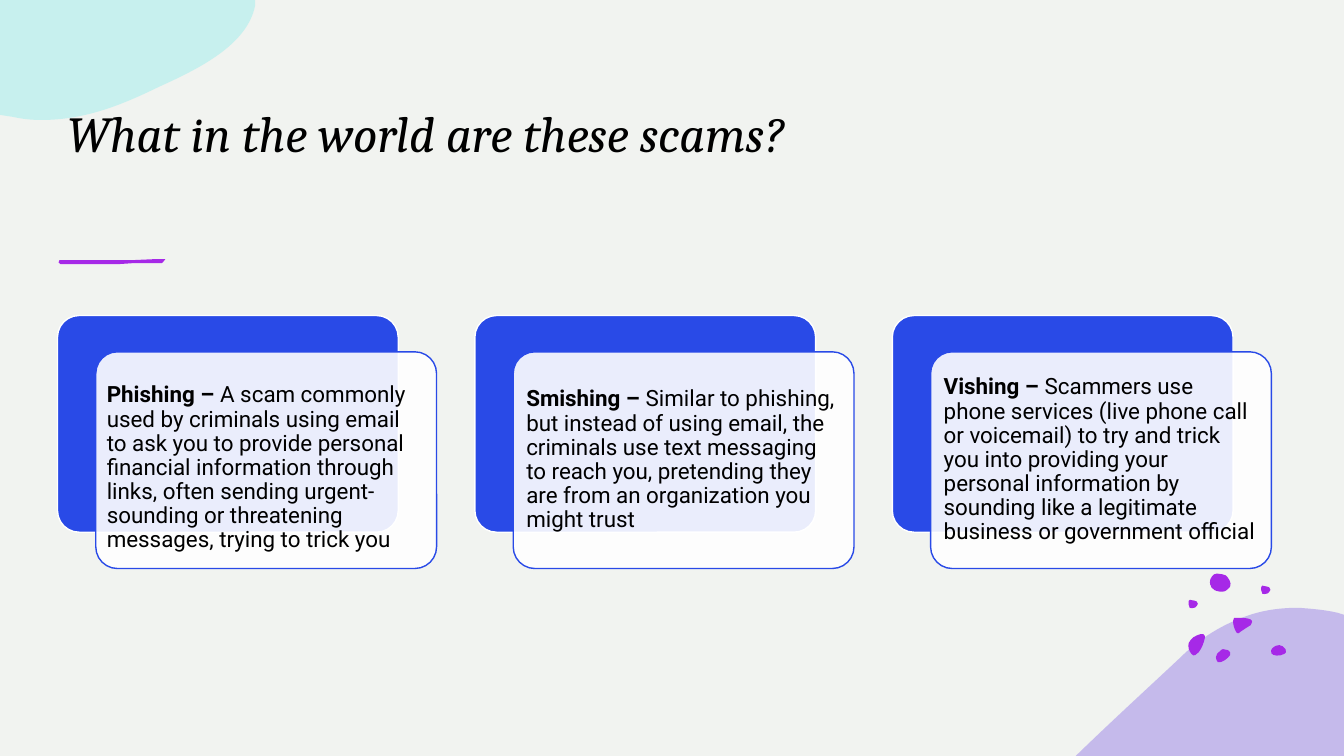
from pptx import Presentation
from pptx.dml.color import RGBColor
from pptx.enum import shapes, text
from pptx.oxml import parse_xml
from pptx.oxml.ns import nsdecls, qn
from pptx.util import Inches, Pt

THEME = {
    "page": "F1F3F0", "ink": "000000", "blue": "294AE7", "white": "FFFFFF",
    "purple": "A629E7", "lilac": "9B82E8", "teal": "9EEEED",
    "head": "Cambria", "body": "Roboto", "head_pt": 36, "body_pt": 16,
}
TITLE = "What in the world are these scams?"

# Term, meaning, text inset, downward shift of the text
CARDS = [
    ("Phishing – ", "A scam commonly used by criminals using email to ask you to "
     "provide personal financial information through links, often sending "
     "urgent-sounding or threatening messages, trying to trick you", 0.05, 0.08),
    ("Smishing –", " Similar to phishing, but instead of using email, the criminals "
     "use text messaging to reach you, pretending they are from an organization "
     "you might trust", 0.07, 0),
    ("Vishing – ", "Scammers use phone services (live phone call or voicemail) to try "
     "and trick you into providing your personal information by sounding like a "
     "legitimate business or government official", 0.07, 0),
]

# Outlines: a start point, then lines (x, y) or curves (two handles and an end)
HILL = [(12.88, 6.03), (13.01, 6.04, 13.14, 6.05, 13.27, 6.08), (13.33, 6.1),
        (13.33, 7.5), (10.67, 7.5), (10.68, 7.49),
        (11.02, 7.16, 11.37, 6.84, 11.69, 6.54),
        (11.91, 6.32, 12.14, 6.19, 12.37, 6.11),
        (12.54, 6.05, 12.71, 6.03, 12.88, 6.03)]
CLOUD = [(0, 0), (2.53, 0), (2.53, 0.06), (2.45, 0.44, 2, 0.67, 1.58, 0.86),
         (1.23, 1.03, 0.86, 1.19, 0.41, 1.19), (0.31, 1.19, 0.22, 1.18, 0.13, 1.16),
         (0, 1.14), (0, 0)]
RULE = [(0.59, 2.58), (0.88, 2.58), (1.33, 2.58), (1.55, 2.57), (1.64, 2.57),
        (1.61, 2.59, 1.63, 2.62, 1.57, 2.61), (1.33, 2.61), (1.18, 2.62), (0.6, 2.62),
        (0.57, 2.62, 0.58, 2.59, 0.59, 2.58)]
PEBBLE = [(0.01, 0.05), (0.01, 0.05, 0, 0.01, 0.02, 0), (0.04, 0, 0.05, 0, 0.07, 0.01),
          (0.08, 0.01, 0.1, 0.02, 0.1, 0.04), (0.1, 0.05, 0.09, 0.06, 0.08, 0.07),
          (0.08, 0.07, 0.08, 0.08, 0.06, 0.08), (0.05, 0.08, 0.03, 0.09, 0.02, 0.08),
          (0.01, 0.06, 0.01, 0.06, 0.01, 0.05)]
PEBBLES = [(12.5, 5.81), (11.78, 5.95)]
DOTS = [
    [(12.13, 6.44), (12.15, 6.44, 12.16, 6.44, 12.18, 6.45),
     (12.2, 6.46, 12.21, 6.48, 12.2, 6.5), (12.18, 6.53, 12.12, 6.58, 12.08, 6.57),
     (12.07, 6.56, 12.06, 6.54, 12.06, 6.52), (12.06, 6.5, 12.08, 6.47, 12.1, 6.46),
     (12.11, 6.45, 12.12, 6.44, 12.13, 6.44)],
    [(11.91, 6.29), (11.93, 6.29, 11.95, 6.29, 11.95, 6.31),
     (11.95, 6.32, 11.95, 6.32, 11.95, 6.33),
     (11.94, 6.38, 11.92, 6.43, 11.89, 6.47), (11.87, 6.49, 11.84, 6.52, 11.82, 6.49),
     (11.79, 6.46, 11.78, 6.41, 11.79, 6.38), (11.8, 6.35, 11.82, 6.34, 11.84, 6.32),
     (11.85, 6.32, 11.88, 6.29, 11.91, 6.29)],
    [(12.69, 6.4), (12.71, 6.4, 12.74, 6.42, 12.75, 6.44),
     (12.76, 6.46, 12.76, 6.48, 12.73, 6.49), (12.7, 6.51, 12.62, 6.51, 12.61, 6.48),
     (12.6, 6.46, 12.61, 6.44, 12.62, 6.43), (12.64, 6.41, 12.66, 6.4, 12.69, 6.4)],
    [(12.01, 5.81), (12, 5.81, 11.99, 5.75, 12.02, 5.72),
     (12.04, 5.7, 12.04, 5.69, 12.07, 5.69), (12.1, 5.69, 12.14, 5.7, 12.16, 5.71),
     (12.18, 5.73, 12.22, 5.78, 12.2, 5.82), (12.17, 5.85, 12.16, 5.87, 12.12, 5.87),
     (12.09, 5.87, 12.04, 5.86, 12.03, 5.84), (12.01, 5.83, 12.01, 5.82, 12.01, 5.81)],
    [(12.28, 6.13), (12.34, 6.13, 12.45, 6.13, 12.41, 6.19),
     (12.41, 6.2, 12.4, 6.21, 12.39, 6.21), (12.36, 6.23, 12.33, 6.25, 12.3, 6.27),
     (12.29, 6.28, 12.28, 6.29, 12.27, 6.28), (12.27, 6.28, 12.26, 6.27, 12.26, 6.27),
     (12.24, 6.23, 12.23, 6.2, 12.23, 6.16), (12.23, 6.15, 12.23, 6.14, 12.24, 6.13),
     (12.25, 6.13, 12.27, 6.13, 12.28, 6.13)],
]
LEFT, TOP, PITCH = 0.57, 3.13, 4.14
WIDE, HIGH, STEP, PAD = 3.38, 2.15, (0.38, 0.36), 0.06


def rgb(name):
    return RGBColor.from_string(THEME[name])


def paint(shape, fill, alpha=100, line=None):
    shape.shadow.inherit = False
    shape.fill.solid()
    shape.fill.fore_color.rgb = rgb(fill)
    if alpha < 100:
        color = shape.fill._xPr.find(qn("a:solidFill"))[0]
        color.append(parse_xml(f'<a:alpha {nsdecls("a")} val="{alpha * 1000}"/>'))
    if line:
        shape.line.color.rgb = rgb(line)
        shape.line.width = Pt(1)
    else:
        shape.line.fill.background()


def bend(shape, parts):
    """Turn straight segments into cubic curves where a part has handles."""
    for seg, part in zip(list(shape._element.iter(qn("a:lnTo"))), parts):
        if len(part) > 2:
            points = "".join(f'<a:pt x="{x - shape.left}" y="{y - shape.top}"/>'
                             for x, y in zip(part[::2], part[1::2]))
            curve = f'<a:cubicBezTo {nsdecls("a")}>{points}</a:cubicBezTo>'
            seg.getparent().replace(seg, parse_xml(curve))


def blob(slide, outline, fill, alpha=100, dx=0, dy=0):
    parts = [tuple(Inches(v + (dx, dy)[i % 2]) for i, v in enumerate(part))
             for part in outline]
    pen = slide.shapes.build_freeform(*parts[0])
    pen.add_line_segments([part[-2:] for part in parts[1:]], close=True)
    shape = pen.convert_to_shape()
    bend(shape, parts[1:])
    paint(shape, fill, alpha)


def panel(slide, x, y, **look):
    box = slide.shapes.add_shape(shapes.MSO_SHAPE.ROUNDED_RECTANGLE,
                                 *map(Inches, (x, y, WIDE, HIGH)))
    box.adjustments[0] = 0.1
    paint(box, **look)


def write(slide, runs, place, font, size, italic=False, anchor="MIDDLE",
          inset=(0.1, 0.05), space=1.0):
    """Place one paragraph made of (words, bold) runs."""
    frame = slide.shapes.add_textbox(*map(Inches, place)).text_frame
    frame.word_wrap = True
    frame.vertical_anchor = text.MSO_ANCHOR[anchor]
    frame.margin_left = frame.margin_right = Inches(inset[0])
    frame.margin_top = frame.margin_bottom = Inches(inset[1])
    para = frame.paragraphs[0]
    para.line_spacing = space
    for words, bold in runs:
        run = para.add_run()
        run.text = words
        run.font.name, run.font.size = THEME[font], Pt(THEME[size])
        run.font.bold, run.font.italic = bold, italic
        run.font.color.rgb = rgb("ink")


def card(slide, x, term, meaning, inset, drop):
    panel(slide, x, TOP, fill="blue", line="white")
    x, y = x + STEP[0], TOP + STEP[1]
    panel(slide, x, y, fill="white", alpha=90, line="blue")
    place = (x + PAD, y + PAD + drop, WIDE - 2 * PAD, HIGH - 2 * PAD)
    write(slide, [(term, True), (meaning, False)], place, "body", "body_pt",
          inset=(inset, inset), space=0.9)


def main():
    deck = Presentation()
    deck.slide_width, deck.slide_height = Inches(13.33), Inches(7.5)
    slide = deck.slides.add_slide(deck.slide_layouts[6])
    slide.background.fill.solid()
    slide.background.fill.fore_color.rgb = rgb("page")
    blob(slide, HILL, "lilac", 50)
    for dot in DOTS:
        blob(slide, dot, "purple")
    for dx, dy in PEBBLES:
        blob(slide, PEBBLE, "purple", dx=dx, dy=dy)
    blob(slide, CLOUD, "teal", 50)
    blob(slide, RULE, "purple")
    write(slide, [(TITLE, False)], (0.57, 0.76, 11.02, 0.9), "head", "head_pt",
          italic=True, anchor="BOTTOM")
    for i, item in enumerate(CARDS):
        card(slide, LEFT + i * PITCH, *item)
    deck.save("out.pptx")


if __name__ == "__main__":
    main()
